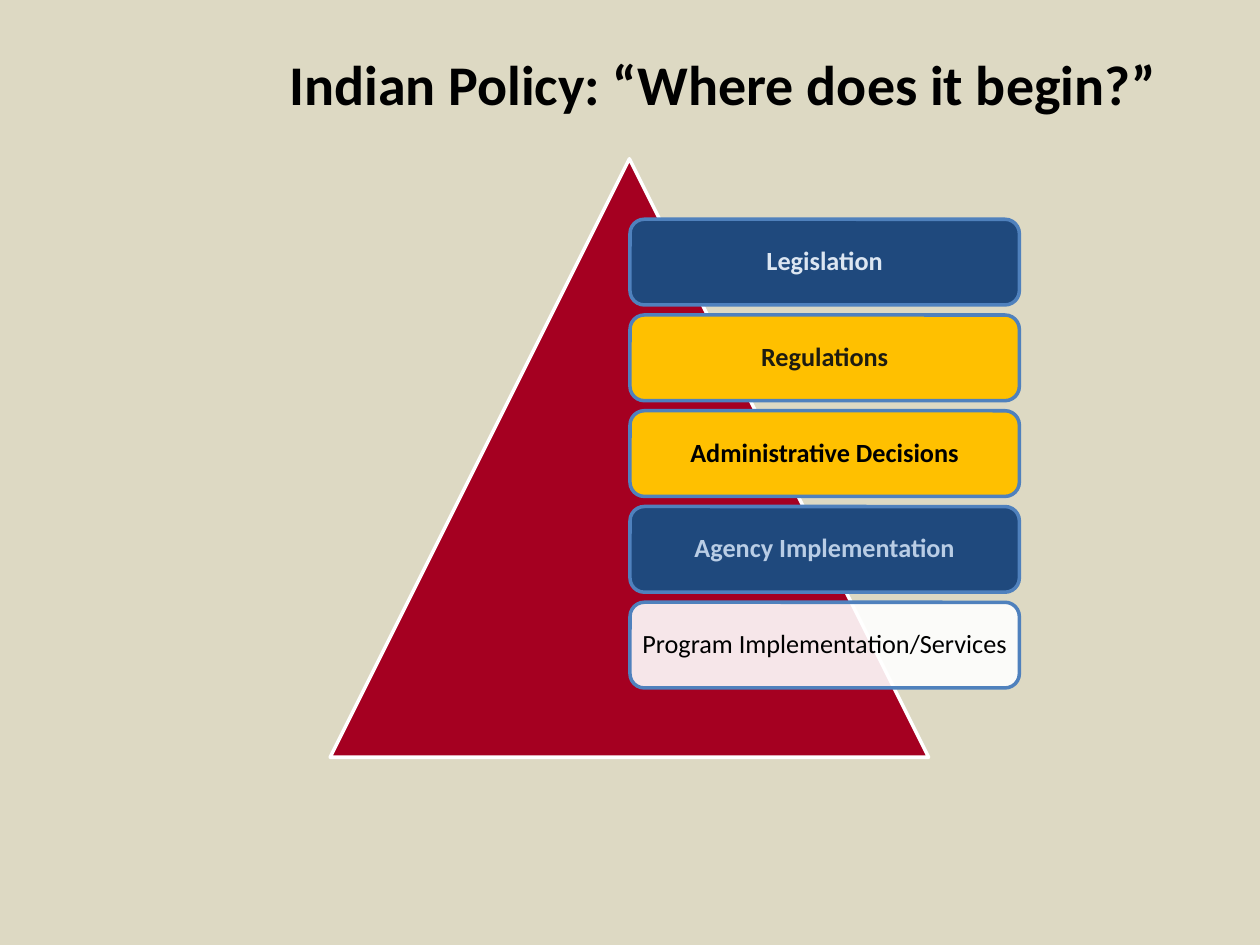
"""Build the Indian policy pyramid slide."""
from lxml import etree
from pptx import Presentation
from pptx.dml.color import RGBColor
from pptx.enum.shapes import MSO_SHAPE as Shape
from pptx.enum.text import MSO_ANCHOR as Anchor, PP_ALIGN as Align
from pptx.oxml.ns import qn
from pptx.util import Inches, Pt

COLORS = {
    "background": "DDD9C3", "black": "000000", "white": "FFFFFF",
    "crimson": "A50021", "navy": "1F497D", "gold": "FFC000",
    "border": "4F81BD", "ice": "DCE6F2", "olive": "1E1C11", "sky": "B9CDE5",
}
TITLE = "Indian Policy: “Where does it begin?”"
STAGES = [
    ("Legislation", "navy", "ice", True, 100),
    ("Regulations", "gold", "olive", True, 100),
    ("Administrative Decisions", "gold", "black", True, 100),
    ("Agency Implementation", "navy", "sky", True, 100),
    ("Program Implementation/Services", "white", "black", False, 90),
]
STAGE_LEFT, STAGE_TOP, STAGE_WIDTH, STAGE_HEIGHT = 5, 1.74, 3.09, 0.68
STAGE_STEP = 0.76


def color(name):
    return RGBColor.from_string(COLORS[name])


def add_filled_shape(slide, kind, box, fill, line, opacity=100):
    shape = slide.shapes.add_shape(kind, *map(Inches, box))
    shape.shadow.inherit = False
    shape.fill.solid()
    shape.fill.fore_color.rgb = color(fill)
    shape.line.color.rgb = color(line)
    shape.line.width = Pt(2)
    if opacity < 100:
        fill_color = shape.fill._xPr.find(qn("a:solidFill"))[0]
        etree.SubElement(fill_color, qn("a:alpha"), val=str(opacity * 1000))
    return shape


def write_text(shape, text, size, text_color, bold, inset):
    frame = shape.text_frame
    frame.word_wrap = True
    frame.vertical_anchor = Anchor.MIDDLE
    frame.margin_left = frame.margin_right = Inches(inset)
    paragraph = frame.paragraphs[0]
    paragraph.alignment = Align.CENTER
    run = paragraph.add_run()
    run.text = text
    run.font.name = "Calibri"
    run.font.size = Pt(size)
    run.font.bold = bold
    run.font.color.rgb = color(text_color)
    return paragraph


def main():
    presentation = Presentation()
    presentation.slide_width, presentation.slide_height = Inches(10), Inches(7.5)
    slide = presentation.slides.add_slide(presentation.slide_layouts[6])
    slide.background.fill.solid()
    slide.background.fill.fore_color.rgb = color("background")

    title = slide.shapes.add_textbox(*map(Inches, (1.48, -0.14, 8.52, 1.6)))
    write_text(title, TITLE, 32, "black", True, 0.1)

    add_filled_shape(slide, Shape.ISOSCELES_TRIANGLE, (2.62, 1.26, 4.75, 4.75),
                     "crimson", "white")
    for index, (text, fill, text_color, bold, opacity) in enumerate(STAGES):
        box = (STAGE_LEFT, STAGE_TOP + index * STAGE_STEP, STAGE_WIDTH, STAGE_HEIGHT)
        stage = add_filled_shape(slide, Shape.ROUNDED_RECTANGLE, box, fill, "border", opacity)
        paragraph = write_text(stage, text, 15, text_color, bold, 0.06)
        paragraph.line_spacing = 0.9

    presentation.save("out.pptx")


if __name__ == "__main__":
    main()
